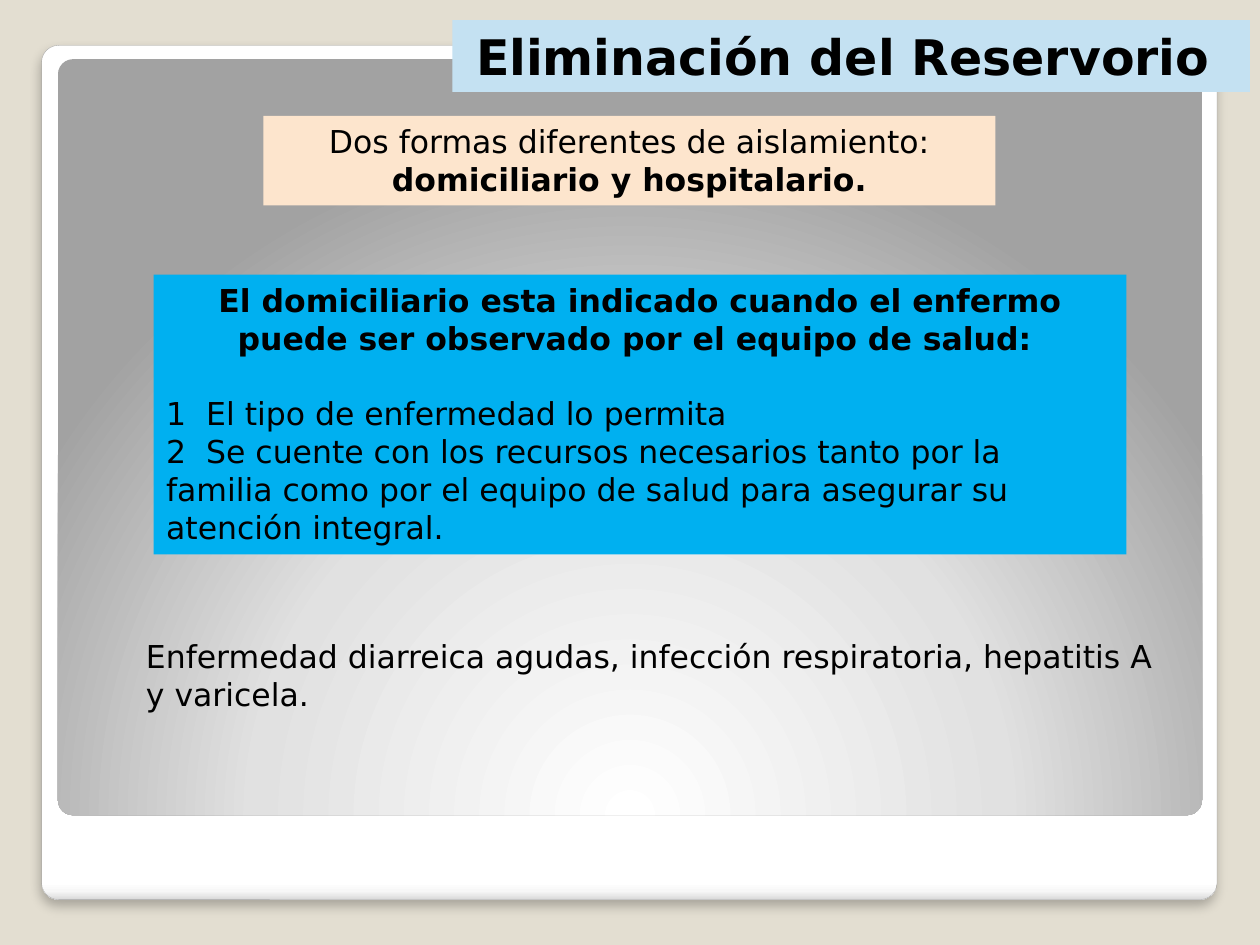
from lxml import etree
from pptx import Presentation
from pptx.dml.color import RGBColor
from pptx.enum.shapes import MSO_SHAPE
from pptx.enum.text import MSO_ANCHOR, PP_ALIGN
from pptx.oxml import parse_xml
from pptx.oxml.ns import nsdecls, qn
from pptx.util import Inches, Pt

FONT = "DejaVu Sans"
COLORS = {
    "back": "E3DED1", "edge": "A4A4A4", "ink": "000000",
    "peach": "FDE5CD", "blue": "00B0F0", "sky": "C4E1F2",
}


def add_panel(box, stops, shade):
    """Add a rounded panel with a gradient; shade is its a:lin or a:path XML."""
    panel = slide.shapes.add_shape(
        MSO_SHAPE.ROUNDED_RECTANGLE, *[Inches(n) for n in box])
    panel.adjustments[0] = 0.02
    panel.shadow.inherit = False
    panel.line.fill.background()
    marks = "".join(
        f'<a:gs pos="{pos * 1000}"><a:srgbClr val="{tone}"/></a:gs>'
        for pos, tone in stops)
    grad = parse_xml(
        f'<a:gradFill {nsdecls("a")} rotWithShape="1">'
        f'<a:gsLst>{marks}</a:gsLst>{shade}</a:gradFill>')
    panel._element.spPr.find(qn("a:prstGeom")).addnext(grad)
    return panel


def add_text(box, fill, size, lines):
    """Add a text box; each line is (text, bold, align, space after)."""
    shape = slide.shapes.add_textbox(*[Inches(n) for n in box])
    if fill:
        shape.fill.solid()
        shape.fill.fore_color.rgb = RGBColor.from_string(COLORS[fill])
    frame = shape.text_frame
    frame.word_wrap = True
    frame.vertical_anchor = MSO_ANCHOR.TOP
    for i, (text, bold, align, gap) in enumerate(lines):
        para = frame.add_paragraph() if i else frame.paragraphs[0]
        para.text = text
        para.alignment = align
        para.space_after = Pt(gap)
        font = para.font
        font.name, font.size, font.bold = FONT, Pt(size), bold
        font.color.rgb = RGBColor.from_string(COLORS["ink"])


deck = Presentation()
deck.slide_width, deck.slide_height = Inches(10), Inches(7.5)
slide = deck.slides.add_slide(deck.slide_layouts[6])
slide.background.fill.solid()
slide.background.fill.fore_color.rgb = RGBColor.from_string(COLORS["back"])

# Framed backdrop
card = add_panel(
    (0.33, 0.36, 9.33, 6.78),
    [(0, "FFFFFF"), (98, "FFFFFF"), (99, "F7F7F7"), (100, "DADADA")],
    '<a:lin ang="5400000" scaled="0"/>')
card.line.color.rgb = RGBColor.from_string(COLORS["edge"])
card.line.width = Pt(0.16)
glow = card._element.spPr.find(qn("a:effectLst"))
drop = etree.SubElement(
    glow, qn("a:outerShdw"), blurRad=str(Pt(6)), dist=str(Pt(4)),
    dir="5400000", algn="tl", rotWithShape="0")
tint = etree.SubElement(drop, qn("a:srgbClr"), val=COLORS["ink"])
etree.SubElement(tint, qn("a:alpha"), val="25000")

add_panel(
    (0.46, 0.47, 9.08, 6),
    [(0, "FFFFFF"), (55, "E1E1E1"), (100, "A2A2A2")],
    '<a:path path="circle"><a:fillToRect l="50000" t="175000" '
    'r="50000" b="-75000"/></a:path>')

# Text
MID, LEFT = PP_ALIGN.CENTER, PP_ALIGN.LEFT
add_text((2.09, 0.92, 5.81, 0.71), "peach", 18, [
    ("Dos formas diferentes de aislamiento:", False, MID, 0),
    ("domiciliario y hospitalario.", True, MID, 0),
])
add_text((1.22, 2.18, 7.72, 2.22), "blue", 18, [
    ("El domiciliario esta indicado cuando el enfermo puede ser observado "
     "por el equipo de salud: ", True, MID, 21.6),
    ("1  El tipo de enfermedad lo permita", False, LEFT, 0),
    ("2  Se cuente con los recursos necesarios tanto por la familia como por "
     "el equipo de salud para asegurar su atención integral.", False, LEFT, 0),
])
add_text((1.06, 5.01, 8.35, 0.71), None, 18, [
    ("Enfermedad diarreica agudas, infección respiratoria, hepatitis A "
     "y varicela.", False, LEFT, 0),
])
add_text((3.59, 0.16, 6.33, 0.57), "sky", 28, [
    ("Eliminación del Reservorio ", True, MID, 0),
])

deck.save("out.pptx")
